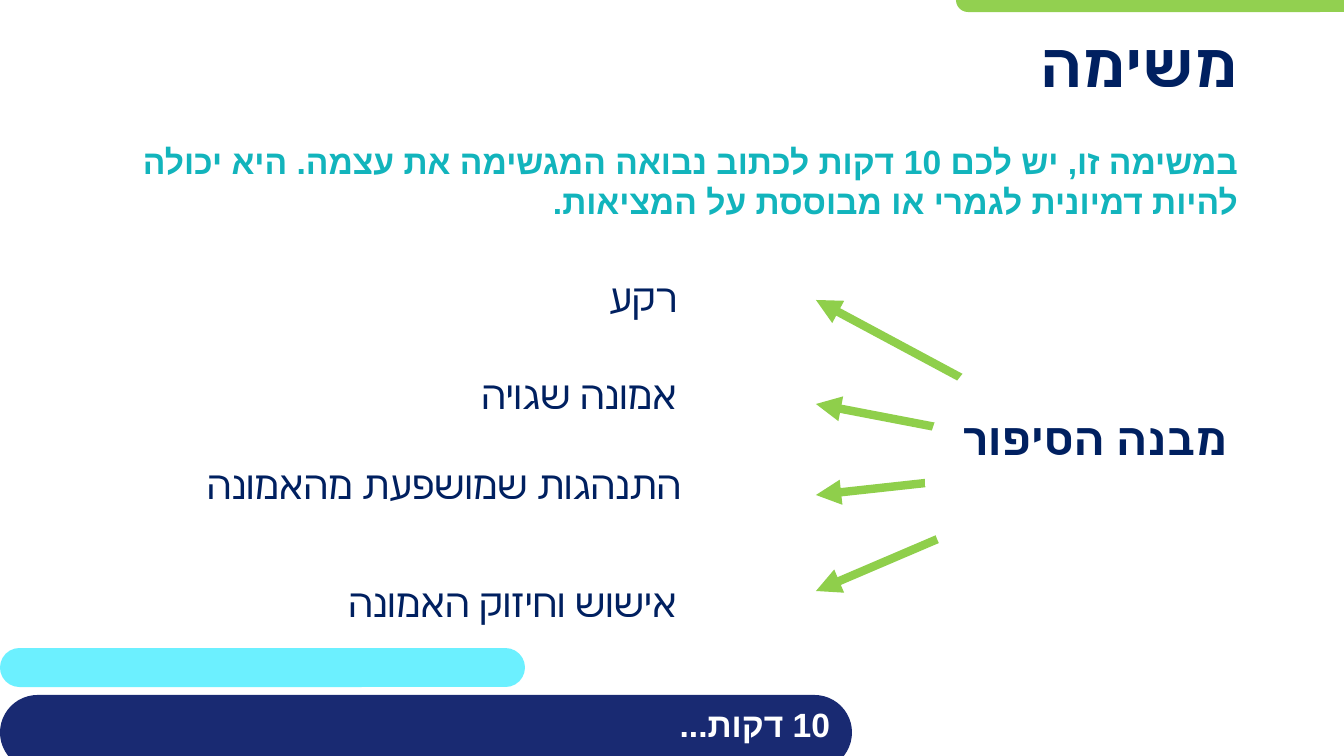
from lxml.etree import SubElement
from pptx import Presentation
from pptx.dml.color import RGBColor
from pptx.enum.shapes import MSO_CONNECTOR, MSO_SHAPE
from pptx.enum.text import MSO_ANCHOR, PP_ALIGN
from pptx.oxml.ns import qn
from pptx.util import Pt

# Content: boxes are left, top, width, height in px
FONT = "League Spartan"
DIGIT_FONT = "Arial"  # right-to-left text that holds digits
NAVY = RGBColor(0x00, 0x20, 0x60)
DEEP_BLUE = RGBColor(0x19, 0x2A, 0x72)
CYAN = RGBColor(0x6C, 0xF0, 0xFF)
TEAL = RGBColor(0x12, 0xB4, 0xBC)
BAR_GREEN = RGBColor(0x92, 0xD0, 0x50)
ARROW_GREEN = RGBColor(0x8F, 0xCF, 0x4B)
WHITE = RGBColor(0xFF, 0xFF, 0xFF)

BARS = [
    ((0, 648, 525, 39), CYAN),
    ((956, -12, 585, 24), BAR_GREEN),
    ((0, 695, 852, 75), DEEP_BLUE),
]
HEADINGS = [
    ("משימה", (0, 23, 1248, 80), 44, NAVY, FONT),
    ("במשימה זו, יש לכם 10 דקות לכתוב נבואה המגשימה את עצמה. "
     "היא יכולה להיות דמיונית לגמרי או מבוססת על המציאות.",
     (61, 117, 1187, 128), 24, TEAL, DIGIT_FONT),
    ("10 דקות...", (105, 701, 735, 47), 24, WHITE, DIGIT_FONT),
    ("מבנה הסיפור", (-11, 398, 1248, 80), 32, NAVY, FONT),
]
# Each step: text, box, height of its arrow tip
STEPS = [
    ("רקע", (204, 245, 494, 67), 300),
    ("אמונה שגויה", (204, 342, 494, 76), 404),
    ("התנהגות שמושפעת מהאמונה", (119, 432, 583, 73), 495),
    ("אישוש וחיזוק האמונה", (41, 550, 657, 76), 591),
]
HUB = (925, 316, 323, 323)
ARROW_START = (1118, 462)
ARROW_TIP_X = 816
STEP_INDENT = 11


def px(length):
    return round(length * 914400 / 100.8)


def add_filled(kind, box, color):
    shape = page.shapes.add_shape(kind, *map(px, box))
    shape.shadow.inherit = False
    shape.fill.solid()
    shape.fill.fore_color.rgb = color
    shape.line.fill.background()
    return shape


def add_text(text, box, size, color, hebrew_font=FONT, bold=True):
    frame = page.shapes.add_textbox(*map(px, box)).text_frame
    frame.word_wrap = True
    frame.text = text
    para = frame.paragraphs[0]
    para.alignment = PP_ALIGN.RIGHT
    para._p.get_or_add_pPr().set("rtl", "1")
    span = para.runs[0]
    span.font.size = Pt(size)
    span.font.bold = bold
    span.font.color.rgb = color
    span.font.name = FONT
    SubElement(span.font._element, qn("a:cs"), typeface=hebrew_font)
    return frame


def add_arrow(start, tip):
    arrow = page.shapes.add_connector(MSO_CONNECTOR.STRAIGHT, *map(px, start + tip))
    arrow.line.color.rgb = ARROW_GREEN
    arrow.line.width = Pt(6)
    SubElement(arrow.line._get_or_add_ln(), qn("a:tailEnd"), type="triangle")
    SubElement(arrow._element.spPr, qn("a:effectLst"))


deck = Presentation()
deck.slide_width, deck.slide_height = px(1344), px(756)
page = deck.slides.add_slide(deck.slide_layouts[6])

# Decorative bars
for box, color in BARS:
    bar = add_filled(MSO_SHAPE.ROUNDED_RECTANGLE, box, color)
    bar.adjustments[0] = 0.5

# Story steps, with arrows from the hub
for text, box, tip_y in STEPS:
    frame = add_text(text, box, 28, NAVY, bold=False)
    para = frame.paragraphs[0]
    para.line_spacing = 1.5
    para._p.get_or_add_pPr().set("marL", str(px(STEP_INDENT)))
    add_arrow(ARROW_START, (ARROW_TIP_X, tip_y))

# White hub covers the arrow starts
add_filled(MSO_SHAPE.OVAL, HUB, WHITE)

# Headings
for text, box, size, color, hebrew_font in HEADINGS:
    frame = add_text(text, box, size, color, hebrew_font)
    frame.vertical_anchor = MSO_ANCHOR.MIDDLE

deck.save("out.pptx")
